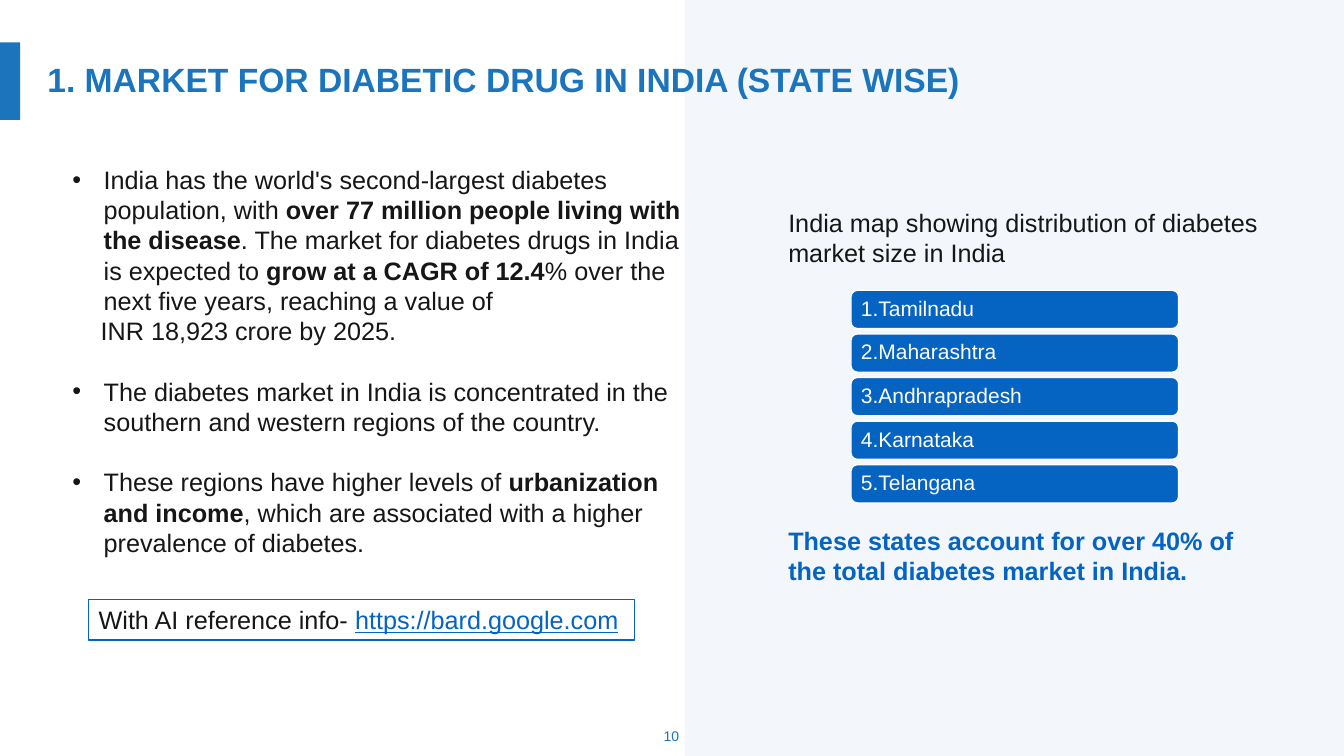
from pptx import Presentation
from pptx import util as u
from pptx.dml.color import RGBColor
from pptx.enum import shapes, text
from pptx.oxml.ns import qn
from lxml import etree

COLORS = {"blue": "1C75BC", "link": "0563C1", "ink": "171616", "white": "FFFFFF"}
BODY = [
    ("bullet", [("India has the world's second-largest diabetes population, with ", False),
                ("over 77 million people living with the disease", True),
                (". The market for diabetes drugs in India is expected to ", False),
                ("grow at a CAGR of 12.4", True),
                ("% over the next five years, reaching a value of", False)]),
    ("plain", [("INR 18,923 crore by 2025.", False)]),
    ("bullet", [("The diabetes market in India is concentrated in the southern "
                 "and western regions of the country.", False)]),
    ("bullet", [("These regions have higher levels of ", False),
                ("urbanization and income", True),
                (", which are associated with a higher prevalence of diabetes.", False)]),
]
STATES = ["Tamilnadu", "Maharashtra", "Andhrapradesh", "Karnataka", "Telangana"]


def color(name):
    return RGBColor.from_string(COLORS[name])


def inches(box):
    return [u.Inches(value) for value in box]


def add_span(para, words, size=18, tint="ink", bold=False, underline=False):
    span = para.add_run()
    span.text = words
    font = span.font
    font.name, font.size, font.bold = "Arial", u.Pt(size), bold
    font.underline = underline
    font.color.rgb = color(tint)


def add_text_box(page, box, anchor=text.MSO_ANCHOR.TOP):
    frame = page.shapes.add_textbox(*inches(box)).text_frame
    frame.word_wrap = True
    frame.vertical_anchor = anchor
    return frame


def add_panel(page, box, fill, kind=shapes.MSO_SHAPE.RECTANGLE):
    panel = page.shapes.add_shape(kind, *inches(box))
    panel.shadow.inherit = False
    panel.line.fill.background()
    if fill:
        panel.fill.solid()
        panel.fill.fore_color.rgb = color(fill)
    else:
        panel.fill.background()
    return panel


def set_indent(para, left, hanging=0, bullet=False):
    props = para._p.get_or_add_pPr()
    props.set("marL", str(u.Inches(left)))
    props.set("indent", str(-u.Inches(hanging)))
    if bullet:
        font = etree.SubElement(props, qn("a:buFont"))
        font.set("typeface", "Arial")
        etree.SubElement(props, qn("a:buChar")).set("char", "•")


def add_background(page, width, height):
    add_panel(page, (0, 0.42, 0.2, 0.77), "blue")
    split = 6.79
    tint = add_panel(page, (split, 0, width - split, height), "blue")
    rgb = tint._element.spPr.find(qn("a:solidFill")).find(qn("a:srgbClr"))
    etree.SubElement(rgb, qn("a:alpha")).set("val", "5000")


def add_title(page, box, words):
    title = page.shapes.title
    title.left, title.top, title.width, title.height = inches(box)
    frame = title.text_frame
    frame.word_wrap = True
    frame.vertical_anchor = text.MSO_ANCHOR.MIDDLE
    para = frame.paragraphs[0]
    para.alignment = text.PP_ALIGN.LEFT
    para.line_spacing = 0.9
    add_span(para, words, size=24, tint="blue", bold=True)


def add_body(page, box):
    frame = add_text_box(page, box)
    for index, (style, spans) in enumerate(BODY):
        para = frame.paragraphs[0] if index == 0 else frame.add_paragraph()
        if style == "bullet":
            set_indent(para, 0.31, 0.31, bullet=True)
            if index:
                para.space_before = u.Pt(21.6)
        else:
            set_indent(para, 0.28)
        for words, bold in spans:
            add_span(para, words, bold=bold)


def add_reference(page, box):
    frame_box = add_panel(page, box, None)
    frame_box.line.color.rgb = color("link")
    frame_box.line.width = u.Pt(0.75)
    frame = frame_box.text_frame
    frame.word_wrap = False
    frame.vertical_anchor = text.MSO_ANCHOR.TOP
    para = frame.paragraphs[0]
    para.alignment = text.PP_ALIGN.LEFT
    add_span(para, "With AI reference info- ")
    add_span(para, "https://bard.google.com", tint="link", underline=True)


def add_state_list(page, box):
    """Ranked state bars, evenly spaced, between a caption and a conclusion."""
    left, top, width, height = box
    note_height = 0.71
    caption = add_text_box(page, (left, top, width, note_height))
    add_span(caption.paragraphs[0],
             "India map showing distribution of diabetes market size in India")
    for index, state in enumerate(STATES):
        bar_box = (left + 0.72, top + 0.87 + index * 0.4325, 3.25, 0.38)
        bar = add_panel(page, bar_box, "link", shapes.MSO_SHAPE.ROUNDED_RECTANGLE)
        bar.line.color.rgb = color("white")
        bar.line.width = u.Pt(1)
        frame = bar.text_frame
        frame.margin_left = frame.margin_right = u.Inches(0.08)
        frame.margin_top = frame.margin_bottom = u.Inches(0.06)
        frame.vertical_anchor = text.MSO_ANCHOR.MIDDLE
        para = frame.paragraphs[0]
        para.alignment = text.PP_ALIGN.LEFT
        para.line_spacing = 0.9
        add_span(para, f"{index + 1}.{state}", size=15, tint="white")
    conclusion = add_text_box(page, (left, top + height - note_height, width, note_height))
    add_span(conclusion.paragraphs[0],
             "These states account for over 40% of the total diabetes market in India.",
             tint="link", bold=True)


def add_page_number(page, box, number):
    para = add_text_box(page, box, text.MSO_ANCHOR.MIDDLE).paragraphs[0]
    para.alignment = text.PP_ALIGN.CENTER
    add_span(para, number, size=10, tint="blue")


def main():
    deck = Presentation()
    deck.slide_width, deck.slide_height = inches((13.33, 7.5))
    page = deck.slides.add_slide(deck.slide_layouts.get_by_name("Title Only"))
    add_background(page, 13.33, 7.5)
    add_title(page, (0.37, 0.21, 12.96, 1.2),
              "1. MARKET FOR DIABETIC DRUG IN INDIA (STATE WISE)")
    add_body(page, (0.62, 1.58, 6.29, 4.04))
    add_state_list(page, (7.72, 2.01, 4.96, 3.86))
    add_reference(page, (0.88, 5.95, 5.41, 0.4))
    add_page_number(page, (6.44, 7.1, 0.44, 0.4), "10")
    deck.save("out.pptx")


if __name__ == "__main__":
    main()
